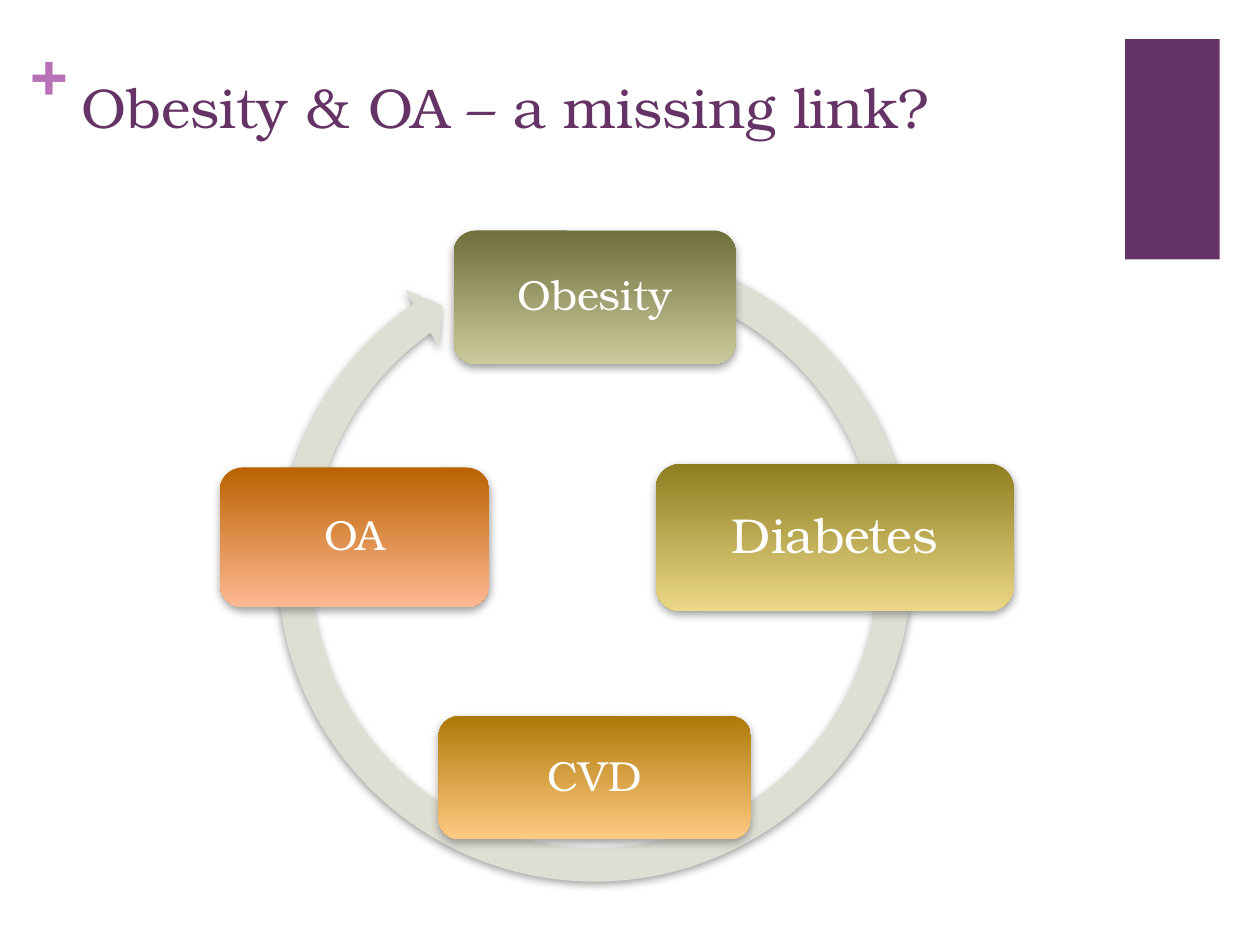
from math import cos, radians, sin

from lxml.etree import SubElement
from pptx import Presentation
from pptx.dml.color import RGBColor
from pptx.enum.shapes import MSO_SHAPE
from pptx.enum.text import MSO_ANCHOR, PP_ALIGN
from pptx.oxml.ns import qn
from pptx.util import Inches, Pt

COLS, ROWS = 100, 75  # grid of equal cells over the slide
COLORS = {
    "plum": "663366",
    "orchid": "B870B8",
    "white": "FFFFFF",
    "ring": "DEDED3",
    "shadow": "808080",
    "olive": ("6F6F3C", "CBCB9D"),
    "gold": ("8F7E21", "EBD787"),
    "amber": ("AE7907", "FFCA82"),
    "orange": ("BA6200", "FFB993"),
}


class Deck:
    font = "TeX Gyre Bonum"

    def __init__(self, prs):
        self.prs = prs
        self.s = prs.slides.add_slide(prs.slide_layouts[6])

    def box(self, left, top, width, height):
        col, row = self.prs.slide_width / COLS, self.prs.slide_height / ROWS
        return [round(v) for v in (left * col, top * row, width * col, height * row)]

    def set_text(self, tf, text, size, color, bold=False):
        tf.text = text
        font = tf.paragraphs[0].runs[0].font
        font.name, font.size, font.bold = self.font, Pt(size), bold
        font.color.rgb = RGBColor.from_string(COLORS[color])

    def text(self, cells, text, size, color, bold=False, inset=True):
        tf = self.s.shapes.add_textbox(*self.box(*cells)).text_frame
        tf.word_wrap = True
        if not inset:
            tf.margin_left = tf.margin_right = tf.margin_top = tf.margin_bottom = 0
        self.set_text(tf, text, size, color, bold)

    def shape(self, kind, cells, color):
        sp = self.s.shapes.add_shape(kind, *self.box(*cells))
        sp.shadow.inherit = False
        sp.line.fill.background()
        fill = COLORS[color]
        if isinstance(fill, tuple):
            sp.fill.gradient()
            sp.fill.gradient_angle = 270
            for stop, value in zip(sp.fill.gradient_stops, fill):
                stop.color.rgb = RGBColor.from_string(value)
        else:
            sp.fill.solid()
            sp.fill.fore_color.rgb = RGBColor.from_string(fill)
        return sp

    def cast_shadow(self, sp):
        effects = sp.element.spPr.find(qn("a:effectLst"))
        shadow = SubElement(effects, qn("a:outerShdw"), blurRad=str(Pt(5)),
                            dist=str(Pt(2)), dir="5400000", rotWithShape="0")
        color = SubElement(shadow, qn("a:srgbClr"), val=COLORS["shadow"])
        SubElement(color, qn("a:alpha"), val="75000")

    def ring(self, cells, color, adjustments):
        sp = self.shape(MSO_SHAPE.CIRCULAR_ARROW, cells, color)
        for i, value in enumerate(adjustments):
            sp.adjustments[i] = value
        self.cast_shadow(sp)

    def node(self, center, width, height, text, size, color):
        x, y = center
        cells = (x - width / 2, y - height / 2, width, height)
        sp = self.shape(MSO_SHAPE.ROUNDED_RECTANGLE, cells, color)
        self.cast_shadow(sp)
        tf = sp.text_frame
        tf.word_wrap = True
        tf.vertical_anchor = MSO_ANCHOR.MIDDLE
        self.set_text(tf, text, size, "white")
        p = tf.paragraphs[0]
        p.alignment = PP_ALIGN.CENTER
        p.line_spacing = 0.9


def main():
    prs = Presentation()
    prs.slide_width, prs.slide_height = Inches(10), Inches(7.5)
    deck = Deck(prs)

    # Header: plus sign, corner block and title
    deck.text((2.4, 2.5, 2.9, 6.1), "+", 36, "orchid", bold=True, inset=False)
    deck.shape(MSO_SHAPE.RECTANGLE, (89.3, 3.1, 7.5, 17.5), "plum")
    deck.text((5.5, 5.3, 82.6, 12.2), "Obesity & OA – a missing link?", 32, "plum")

    # Cycle arrow: band width, head angle, end angle, start angle, head width
    deck.ring((20.7, 18.3, 53, 53), "ring", (0.05, 2.73, 140.97, 172.28, 0.05))

    # Four stages, a quarter turn apart, clockwise from the top
    center_x, center_y, radius = 47.2, 42.65, 19.05
    stages = [
        ("Obesity", 22.4, 10.6, 24, "olive"),
        ("Diabetes", 28.4, 11.7, 28, "gold"),
        ("CVD", 24.8, 9.8, 24, "amber"),
        ("OA", 21.4, 11.1, 24, "orange"),
    ]
    for i, (name, width, height, size, color) in enumerate(stages):
        turn = radians(360 / len(stages) * i - 90)
        center = (center_x + radius * cos(turn), center_y + radius * sin(turn))
        deck.node(center, width, height, name, size, color)

    prs.save("out.pptx")


if __name__ == "__main__":
    main()
